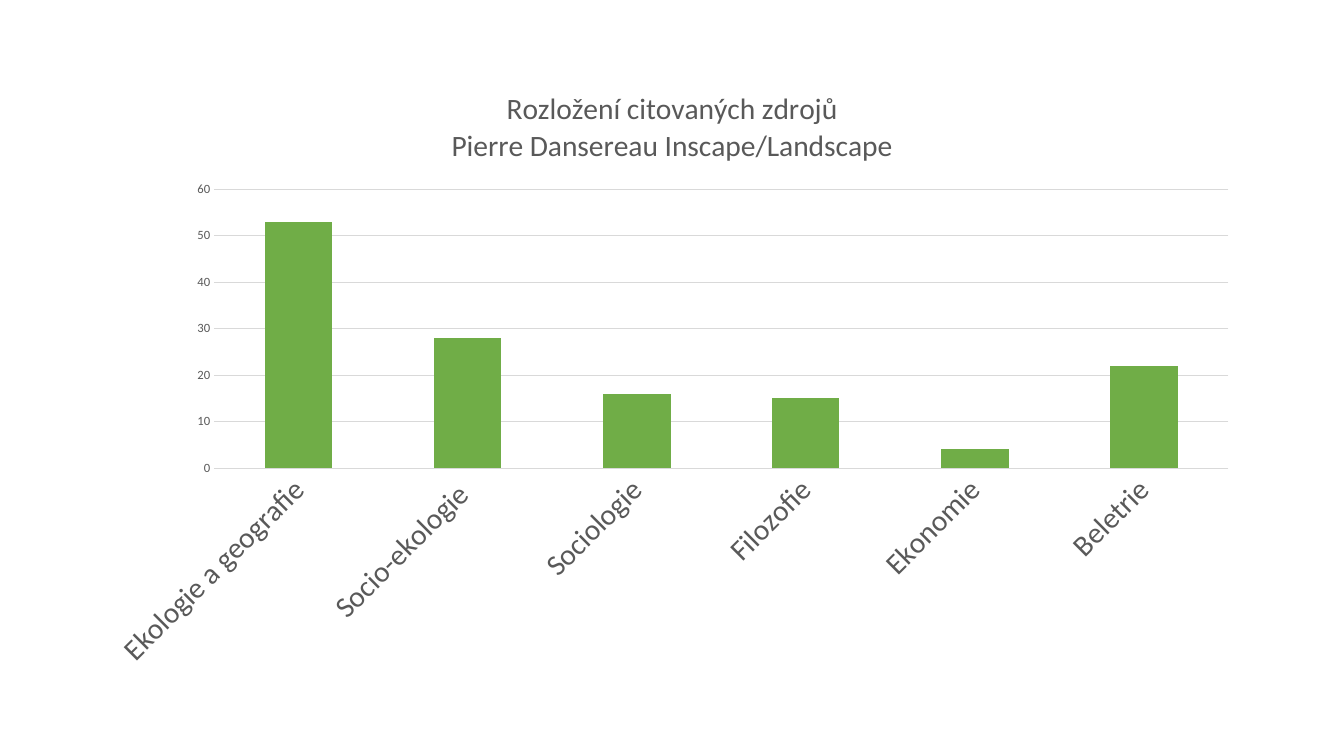
"""Build a slide with a column chart of cited sources by field."""
from lxml import etree
from pptx import Presentation
from pptx.chart.data import CategoryChartData
from pptx.dml.color import RGBColor
from pptx.enum.chart import XL_CHART_TYPE as ChartType, XL_TICK_MARK as TickMark
from pptx.oxml import parse_xml
from pptx.oxml.ns import nsdecls, qn
from pptx.util import Cm, Pt

FONT = "Calibri"
TEXT_GREY = "595959"
LINE_GREY = "D9D9D9"
GREEN = "70AD47"


def paint(fill, color):
    fill.solid()
    fill.fore_color.rgb = RGBColor.from_string(color)


def style_font(font, size, color):
    font.name = FONT
    font.size = Pt(size)
    font.bold = False
    paint(font.fill, color)


deck = Presentation()
deck.slide_width = Cm(33.87)
deck.slide_height = Cm(19.05)
page = deck.slides.add_slide(deck.slide_layouts[6])

source_counts = {
    "Ekologie a geografie": 53,
    "Socio-ekologie ": 28,
    "Sociologie": 16,
    "Filozofie": 15,
    "Ekonomie": 4,
    "Beletrie": 22,
}
chart_data = CategoryChartData()
chart_data.categories = list(source_counts)
chart_data.add_series("Series 1", list(source_counts.values()))
chart = page.shapes.add_chart(
    ChartType.COLUMN_STACKED, Cm(2.33), Cm(1.73), Cm(29.21), Cm(15.44), chart_data
).chart
style_font(chart.font, 10, "000000")
chart.has_legend = False

chart.has_title = True
chart.chart_title.include_in_layout = False
title_frame = chart.chart_title.text_frame
title_lines = ["Rozložení citovaných zdrojů", "Pierre Dansereau Inscape/Landscape"]
for index, line in enumerate(title_lines):
    para = title_frame.add_paragraph() if index else title_frame.paragraphs[0]
    style_font(para.font, 21.1, TEXT_GREY)
    span = para.add_run()
    span.text = line
    style_font(span.font, 21.1, TEXT_GREY)

plot = chart.plots[0]
plot.gap_width = 150
plot.overlap = 100
plot.vary_by_categories = False
paint(plot.series[0].format.fill, GREEN)

category_axis, value_axis = chart.category_axis, chart.value_axis
for axis, size in ((category_axis, 21), (value_axis, 9)):
    axis.major_tick_mark = TickMark.NONE
    axis.minor_tick_mark = TickMark.NONE
    style_font(axis.tick_labels.font, size, TEXT_GREY)

value_axis.minimum_scale = 0
value_axis.maximum_scale = 60
value_axis.major_unit = 10
value_axis.has_major_gridlines = True
value_axis.format.line.fill.background()
for line in (category_axis.format.line, value_axis.major_gridlines.format.line):
    line.width = Pt(0.75)
    paint(line.fill, LINE_GREY)

label_body = category_axis._element.find(qn("c:txPr")).find(qn("a:bodyPr"))
label_body.set("rot", "-2700000")
label_body.set("vert", "horz")

plot_area = chart._chartSpace.chart.plotArea
for old_layout in plot_area.findall(qn("c:layout")):
    plot_area.remove(old_layout)
layout = parse_xml(f"<c:layout {nsdecls('c')}><c:manualLayout/></c:layout>")
layout_rules = {
    "layoutTarget": "inner", "xMode": "edge", "yMode": "edge",
    "x": "0.105", "y": "0.197", "w": "0.875", "h": "0.455",
}
for name, value in layout_rules.items():
    etree.SubElement(layout[0], qn(f"c:{name}")).set("val", value)
plot_area.insert(0, layout)

deck.save("out.pptx")
